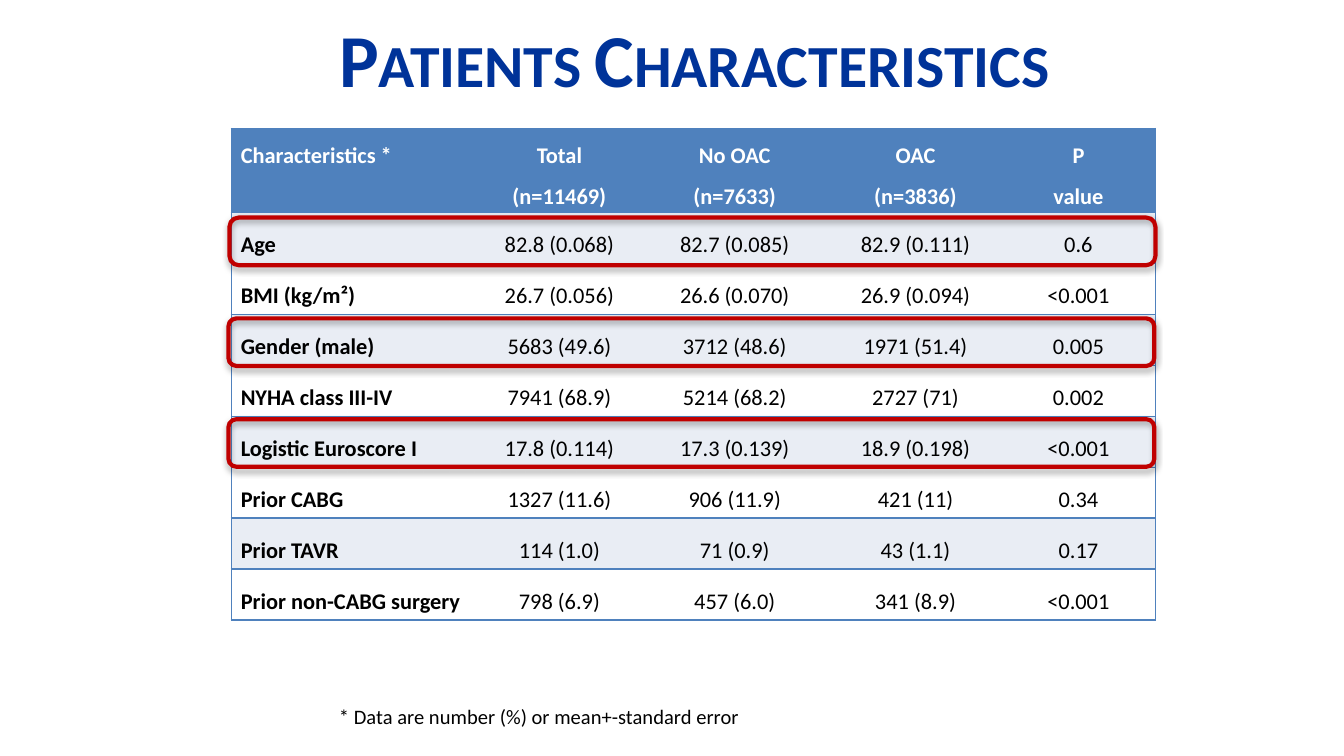
import pptx
import pptx.util
import pptx.dml.color
import pptx.enum.shapes
import pptx.enum.text
import pptx.oxml

Pt = pptx.util.Pt
RGB = pptx.dml.color.RGBColor
Align = pptx.enum.text.PP_ALIGN
Anchor = pptx.enum.text.MSO_ANCHOR

NAVY = RGB(0x00, 0x33, 0x99)
BLUE = RGB(0x4F, 0x81, 0xBD)
PALE = RGB(0xE9, 0xED, 0xF4)
WHITE = RGB(0xFF, 0xFF, 0xFF)
BLACK = RGB(0, 0, 0)
RED = RGB(0xC0, 0, 0)

NS = 'xmlns:a="http://schemas.openxmlformats.org/drawingml/2006/main"'
PLAIN = "{2D5ABB26-0587-4C30-8999-92F81FD0307C}"

WIDTHS = [132.5, 86.4, 101.5, 92.2, 82.4]
HEAD = 44.9
ROW = 27.32
ROWS = [
    ["Characteristics *", "Total\n(n=11469)", "No OAC\n(n=7633)",
     "OAC\n(n=3836)", "P\nvalue"],
    ["Age", "82.8 (0.068)", "82.7 (0.085)", "82.9 (0.111)", "0.6"],
    ["BMI (kg/m²)", "26.7 (0.056)", "26.6 (0.070)", "26.9 (0.094)", "<0.001"],
    ["Gender (male)", "5683 (49.6)", "3712 (48.6)", "1971 (51.4)", "0.005"],
    ["NYHA class III-IV", "7941 (68.9)", "5214 (68.2)", "2727 (71)", "0.002"],
    ["Logistic Euroscore I", "17.8 (0.114)", "17.3 (0.139)", "18.9 (0.198)",
     "<0.001"],
    ["Prior CABG", "1327 (11.6)", "906 (11.9)", "421 (11)", "0.34"],
    ["Prior TAVR", "114 (1.0)", "71 (0.9)", "43 (1.1)", "0.17"],
    ["Prior non-CABG surgery", "798 (6.9)", "457 (6.0)", "341 (8.9)", "<0.001"],
]


def put(item, values):
    """Set each named attribute of item."""
    for name, value in values.items():
        setattr(item, name, value)


class Deck:
    font = "Calibri"

    def __init__(self, wide, high):
        self.show = pptx.Presentation()
        put(self.show, {"slide_width": Pt(wide), "slide_height": Pt(high)})
        self.slide = self.show.slides.add_slide(self.show.slide_layouts[6])

    def label(self, frame, text, size, color, bold=False, align=Align.LEFT,
              space=1.0):
        frame.text = text
        for para in frame.paragraphs:
            put(para, {"alignment": align, "line_spacing": space})
            for run in para.runs:
                put(run.font, {"name": self.font, "size": Pt(size),
                               "bold": bold})
                run.font.color.rgb = color

    def text(self, box, text, size, color, anchor=Anchor.TOP, **look):
        frame = self.slide.shapes.add_textbox(*map(Pt, box)).text_frame
        put(frame, {"word_wrap": True, "vertical_anchor": anchor})
        self.label(frame, text, size, color, **look)
        return frame

    def title(self, box, text):
        frame = self.text(box, text, 40, NAVY, Anchor.MIDDLE, bold=True,
                          align=Align.CENTER)
        frame.paragraphs[0].runs[0]._r.get_or_add_rPr().set("cap", "small")

    def edge(self, cell, sides):
        """Draw thin blue borders on the given sides (L, R, T, B)."""
        for side in sides:
            cell._tc.get_or_add_tcPr().append(pptx.oxml.parse_xml(
                f'<a:ln{side} {NS} w="12700"><a:solidFill>'
                f'<a:srgbClr val="{BLUE}"/></a:solidFill></a:ln{side}>'))

    def table(self, left, top, rows, widths, heights):
        box = map(Pt, (left, top, sum(widths), sum(heights)))
        table = self.slide.shapes.add_table(len(rows), len(widths), *box).table
        table._tbl.tblPr.xpath("a:tableStyleId")[0].text = PLAIN
        for col, wide in zip(table.columns, widths):
            col.width = Pt(wide)
        for r, line in enumerate(rows):
            table.rows[r].height = Pt(heights[r])
            for c, text in enumerate(line):
                cell = table.cell(r, c)
                put(cell, {
                    "margin_left": Pt(5), "margin_right": Pt(5),
                    "margin_top": 0, "margin_bottom": 0,
                    "vertical_anchor": Anchor.MIDDLE if r else Anchor.TOP})
                ends = {0: "L", len(widths) - 1: "R"}
                self.edge(cell, ends.get(c, "") + "TB")
                cell.fill.solid()
                cell.fill.fore_color.rgb = (
                    BLUE if r == 0 else PALE if r % 2 else WHITE)
                self.label(cell.text_frame, text, 12, BLACK if r else WHITE,
                           bold=r == 0 or c == 0, space=1.5,
                           align=Align.CENTER if c else Align.LEFT)

    def frame(self, box, bend):
        """Outline a row; the theme's soft shadow is kept on purpose."""
        shape = self.slide.shapes.add_shape(
            pptx.enum.shapes.MSO_SHAPE.ROUNDED_RECTANGLE, *map(Pt, box))
        shape.adjustments[0] = bend
        shape.fill.background()
        shape.line.color.rgb = RED
        shape.line.width = Pt(2.25)


def main():
    deck = Deck(720, 405)
    deck.title((48, -3, 648, 68), "Patients Characteristics")
    deck.table(124, 69, ROWS, WIDTHS, [HEAD] + [ROW] * 8)
    for i, (left, bend) in enumerate([(123, 0.19), (122.4, 0.17),
                                      (122.4, 0.17)]):
        deck.frame((left, 116.6 + 54 * i, 496, 25.5), bend)
    deck.text((174.5, 373.6, 306, 20.6),
              "* Data are number (%) or mean+-standard error", 11, BLACK)
    deck.show.save("out.pptx")


if __name__ == "__main__":
    main()
